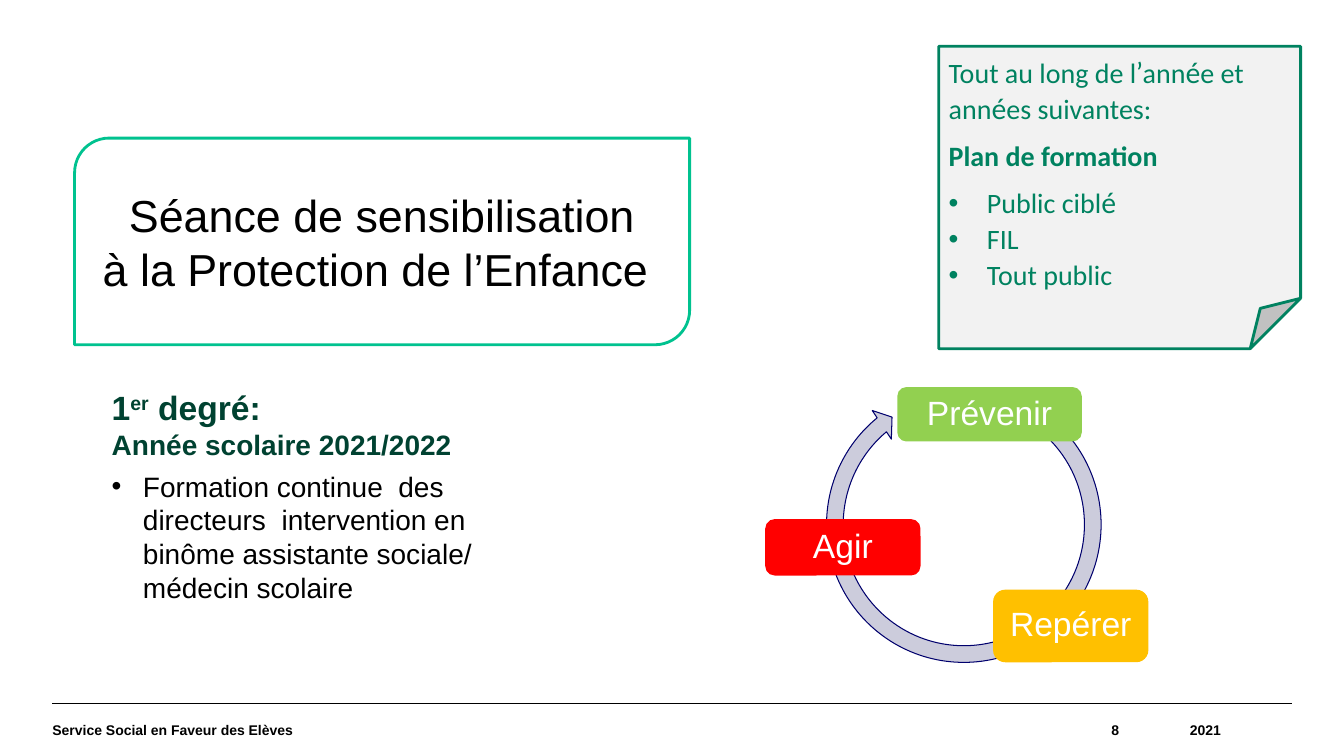
from itertools import groupby
from lxml.etree import SubElement
from pptx import Presentation
from pptx.dml.color import RGBColor
from pptx.enum.shapes import MSO_CONNECTOR as Connector, MSO_SHAPE as Shape
from pptx.enum.text import MSO_ANCHOR as Anchor, PP_ALIGN as Align
from pptx.oxml.ns import qn
from pptx.util import Inches, Pt

COLORS = {
    "black": "000000", "white": "FFFFFF", "heading": "004231", "mint": "00C28F",
    "green": "008260", "paper": "F2F2F2", "ring": "CCCCDC", "navy": "00006D",
    "prevent": "92D050", "spot": "FFC000", "act": "FF0000",
}


def color(name):
    return RGBColor.from_string(COLORS[name])


def add_span(para, text, size, tint, bold=False, font="Arial", baseline=None):
    span = para.add_run()
    span.text = text
    span.font.size = Pt(size)
    span.font.name = font
    span.font.bold = bold
    span.font.color.rgb = color(tint)
    if baseline:
        span._r.get_or_add_rPr().set("baseline", str(baseline))


def add_para(frame, align=Align.LEFT, line=None, after=0):
    first = frame.paragraphs[0]
    para = frame.add_paragraph() if first.runs else first
    para.alignment = align
    para.space_after = Pt(after)
    if line:
        para.line_spacing = line
    return para


def add_bullet(para, indent, tab=None):
    props = para._p.get_or_add_pPr()
    props.set("marL", str(Inches(indent)))
    props.set("indent", str(-Inches(indent)))
    SubElement(props, qn("a:buFont"), typeface="Arial")
    SubElement(props, qn("a:buChar"), char="•")
    if tab:
        tabs = SubElement(props, qn("a:tabLst"))
        SubElement(tabs, qn("a:tab"), pos=str(Inches(tab)), algn="l")


def set_frame(frame, anchor, inset=None):
    frame.word_wrap = True
    frame.vertical_anchor = anchor
    if inset is not None:
        frame.margin_left = frame.margin_right = Inches(inset)
        frame.margin_top = frame.margin_bottom = Inches(inset)


def add_text(page, place, anchor=Anchor.TOP, inset=None):
    box = page.shapes.add_textbox(*map(Inches, place))
    set_frame(box.text_frame, anchor, inset)
    return box.text_frame


def add_figure(page, kind, place, fill=None, line=None, width=2, adjust=(), inset=None):
    figure = page.shapes.add_shape(kind, *map(Inches, place))
    figure.shadow.inherit = False
    for index, value in enumerate(adjust):
        figure.adjustments[index] = value
    if fill:
        figure.fill.solid()
        figure.fill.fore_color.rgb = color(fill)
    else:
        figure.fill.background()
    if line:
        figure.line.color.rgb = color(line)
        figure.line.width = Pt(width)
    else:
        figure.line.fill.background()
    set_frame(figure.text_frame, Anchor.MIDDLE, inset)
    return figure.text_frame


def add_title(page):
    frame = add_figure(page, Shape.ROUND_2_DIAG_RECTANGLE, (0.74, 1.37, 6.1, 2.05),
                       line="mint", adjust=(0.167, 0))
    for text in ("Séance de sensibilisation", "à la Protection de l’Enfance "):
        add_span(add_para(frame, Align.CENTER), text, 32, "black")


def add_note_spans(para, text, bold=False):
    for special, letters in groupby(text, lambda letter: letter in "’é"):
        add_span(para, "".join(letters), 20, "green", bold, "Lato" if special else "Calibri")


def add_note(page):
    frame = add_figure(page, Shape.FOLDED_CORNER, (9.31, 0.46, 3.59, 3), "paper", "green")
    intro = add_para(frame, line=1.07, after=8)
    add_note_spans(intro, "Tout au long de l’année et années suivantes:")
    add_note_spans(add_para(frame, line=1.07, after=8), "Plan de formation", True)
    for text in ("Public ciblé", "FIL", "Tout public"):
        para = add_para(frame, line=1.07)
        add_bullet(para, 0.38, 0.5)
        add_note_spans(para, text)


def add_programme(page):
    frame = add_text(page, (1.01, 3.79, 4.14, 2.57))
    heading = add_para(frame)
    for text, baseline in (("1", None), ("er", 30000), (" degré:", None)):
        add_span(heading, text, 24, "heading", True, baseline=baseline)
    add_span(add_para(frame, after=6), "Année scolaire 2021/2022", 20, "heading", True)
    para = add_para(frame)
    add_bullet(para, 0.31)
    add_span(para, "Formation continue  des directeurs  intervention en "
                   "binôme assistante sociale/ médecin scolaire", 20, "black")


def add_cycle(page):
    add_figure(page, Shape.CIRCULAR_ARROW, (8.11, 3.75, 2.9, 2.91), "ring", "navy", 0.75,
               (0.057, 3.405, 138.354, 173.439, 0.059))
    steps = (
        ("Prévenir", (8.9, 3.84, 1.83, 0.54), "prevent"),
        ("Repérer", (9.85, 5.85, 1.54, 0.72), "spot"),
        ("Agir", (7.59, 5.15, 1.54, 0.56), "act"),
    )
    for text, place, fill in steps:
        frame = add_figure(page, Shape.ROUNDED_RECTANGLE, place, fill,
                           adjust=(0.167,), inset=0.09)
        add_span(add_para(frame, Align.CENTER, 0.9), text, 24, "white")


def add_footer(page):
    rule = page.shapes.add_connector(Connector.STRAIGHT, Inches(0.52), Inches(6.98),
                                     Inches(12.81), Inches(6.98))
    rule.line.color.rgb = color("black")
    rule.line.width = Pt(0.8)
    SubElement(rule._element.spPr, qn("a:effectLst"))
    cells = (
        ("Service Social en Faveur des Elèves", 0.52, 8.61, Align.LEFT),
        ("8", 9.13, 1.97, Align.RIGHT),
        ("2021", 11.1, 1.71, Align.CENTER),
    )
    for text, left, width, align in cells:
        frame = add_text(page, (left, 6.98, width, 0.52), Anchor.MIDDLE, 0)
        add_span(add_para(frame, align), text, 10, "black", True)


def main():
    deck = Presentation()
    deck.slide_width = Inches(13.33)
    deck.slide_height = Inches(7.5)
    page = deck.slides.add_slide(deck.slide_layouts[6])
    add_footer(page)
    add_programme(page)
    add_title(page)
    add_note(page)
    add_cycle(page)
    deck.save("out.pptx")


if __name__ == "__main__":
    main()
